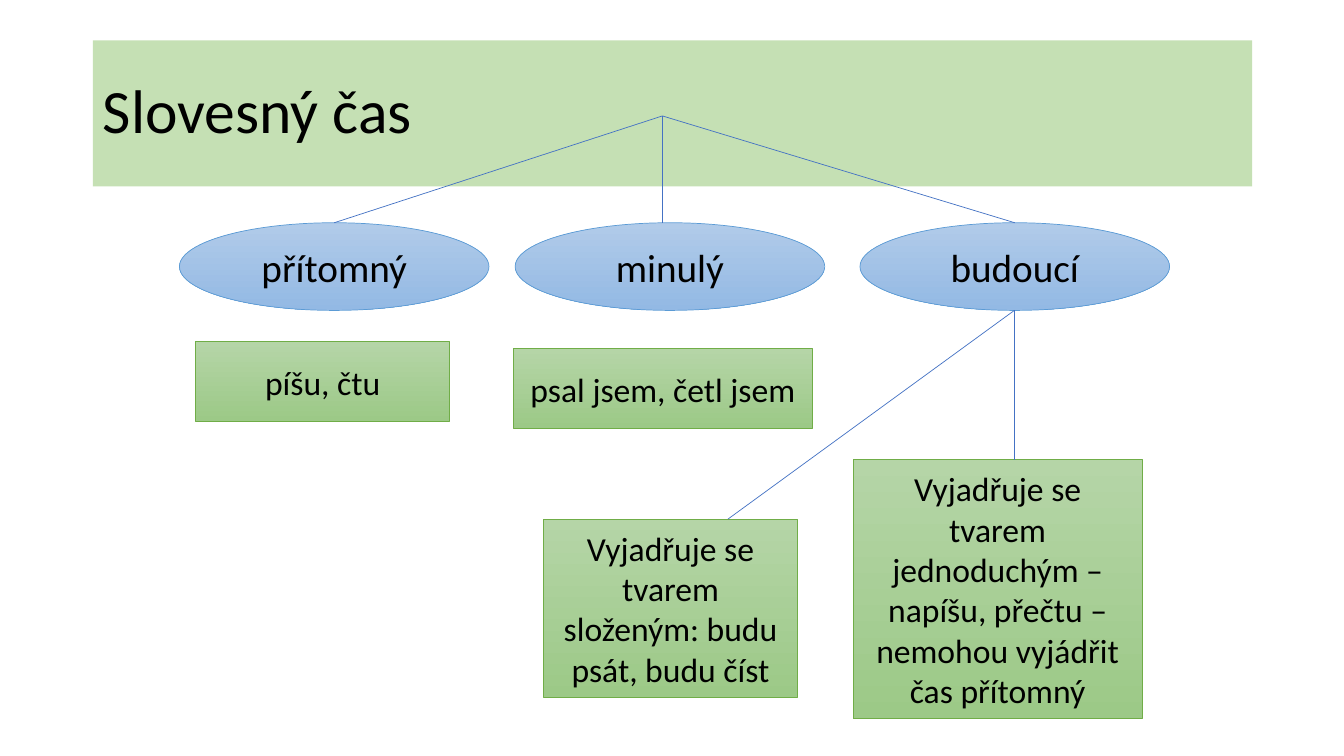
from dataclasses import dataclass

from lxml import etree
from pptx import Presentation
from pptx.dml.color import RGBColor as RGB
from pptx.enum.shapes import MSO_CONNECTOR as CONN, MSO_SHAPE as SHAPE
from pptx.enum.text import MSO_ANCHOR as ANCHOR, MSO_AUTO_SIZE as FIT, PP_ALIGN as ALIGN
from pptx.oxml.ns import qn
from pptx.util import Inches, Pt


@dataclass(frozen=True)
class Theme:
    font: str = "Calibri"
    text: str = "000000"
    title_fill: str = "C5E0B4"
    blue: tuple = ("B1CBE9", "93B9E4", "5B9BD5")  # top, bottom, outline
    green: tuple = ("B5D5A7", "9CC987", "70AD47")
    line: str = "4472C4"
    line_width: float = 0.5
    title_size: int = 44
    tense_size: int = 28
    example_size: int = 24


class TenseSlide:
    def __init__(self, prs, theme):
        self.theme = theme
        self.s = prs.slides.add_slide(prs.slide_layouts[5])

    def set_text(self, sp, text, size, align):
        tf = sp.text_frame
        tf.text = text
        tf.word_wrap = True
        tf.auto_size = FIT.NONE
        tf.vertical_anchor = ANCHOR.MIDDLE
        p = tf.paragraphs[0]
        p.alignment = align
        p.font.name = self.theme.font
        p.font.size = Pt(size)
        p.font.color.rgb = RGB.from_string(self.theme.text)
        return p

    def title(self, text, left, top, width, height):
        sp = self.s.shapes.title
        sp.left, sp.top, sp.width, sp.height = map(Inches, (left, top, width, height))
        sp.fill.solid()
        sp.fill.fore_color.rgb = RGB.from_string(self.theme.title_fill)
        p = self.set_text(sp, text, self.theme.title_size, ALIGN.LEFT)
        p.line_spacing = 0.9

    def node(self, kind, text, box, colors, size):
        sp = self.s.shapes.add_shape(kind, *map(Inches, box))
        sp.shadow.inherit = False
        sp.fill.gradient()
        sp.fill.gradient_angle = 270
        for stop, color in zip(sp.fill.gradient_stops, colors):
            stop.color.rgb = RGB.from_string(color)
        sp.line.color.rgb = RGB.from_string(colors[2])
        sp.line.width = Pt(self.theme.line_width)
        self.set_text(sp, text, size, ALIGN.CENTER)
        return sp

    def tense(self, text, left):
        box = (left, 2.21, 3.07, 0.87)
        return self.node(SHAPE.OVAL, text, box, self.theme.blue, self.theme.tense_size)

    def example(self, text, *box):
        return self.node(SHAPE.RECTANGLE, text, box, self.theme.green, self.theme.example_size)

    def link(self, start, end, target=None):
        c = self.s.shapes.add_connector(CONN.STRAIGHT, *map(Inches, start + end))
        if target is not None:
            c.end_connect(target, 0)
        c.line.color.rgb = RGB.from_string(self.theme.line)
        c.line.width = Pt(self.theme.line_width)
        etree.SubElement(c._element.spPr, qn("a:effectLst"))


def main():
    prs = Presentation()
    prs.slide_width, prs.slide_height = Inches(13.33), Inches(7.5)
    slide = TenseSlide(prs, Theme())

    # Title band
    slide.title("Slovesný čas", 0.92, 0.4, 11.5, 1.45)

    # Three tenses
    present = slide.tense("přítomný", 1.78)
    slide.tense("minulý", 5.11)
    future = slide.tense("budoucí", 8.53)

    # Examples and forms
    slide.example("píšu, čtu", 1.94, 3.39, 2.52, 0.79)
    slide.example("Vyjadřuje se tvarem složeným: budu psát, budu číst",
                  5.39, 5.15, 2.52, 1.77)
    slide.example("psal jsem, četl jsem", 5.09, 3.46, 2.97, 0.79)
    slide.example("Vyjadřuje se tvarem jednoduchým – napíšu, přečtu – "
                  "nemohou vyjádřit čas přítomný", 8.46, 4.56, 2.87, 2.57)

    # Branches from the title to the tenses
    root = (6.57, 1.15)
    slide.link(root, (3.32, 2.21), present)
    slide.link(root, (6.57, 2.21))
    slide.link(root, (10.06, 2.21), future)

    # Branches from the future tense to its two forms
    future_base = (10.06, 3.08)
    slide.link(future_base, (7.22, 5.15))
    slide.link(future_base, (10.06, 4.56))

    prs.save("out.pptx")


if __name__ == "__main__":
    main()
